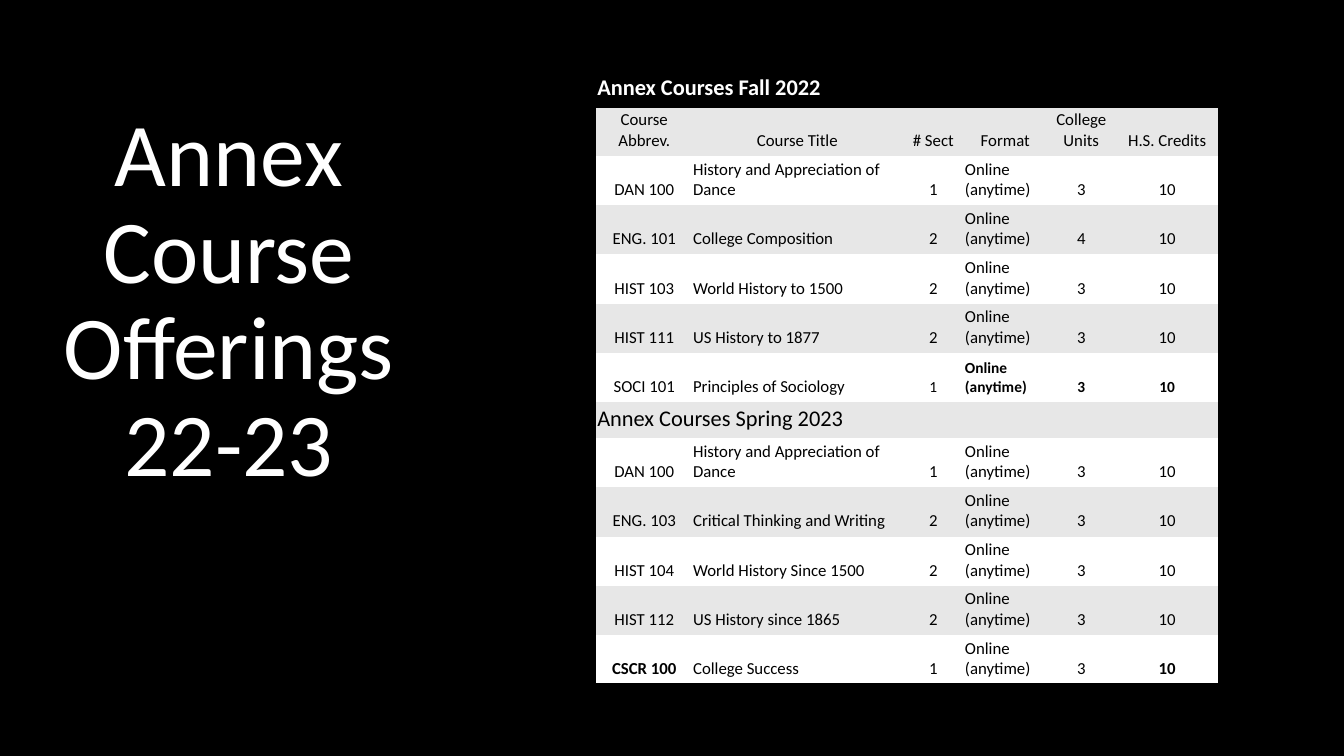
from pptx import Presentation
from pptx.dml.color import RGBColor
from pptx.enum.text import MSO_ANCHOR as Anchor, MSO_AUTO_SIZE as Fit, PP_ALIGN as Align
from pptx.util import Pt
from lxml.etree import SubElement as Sub
from pptx.oxml.ns import qn

BLACK = RGBColor(0, 0, 0)
WHITE = RGBColor(0xFF, 0xFF, 0xFF)
GRAY = RGBColor(0xE7, 0xE7, 0xE7)
FONT = "Calibri"
PLAIN = "{2D5ABB26-0587-4C30-8999-92F81FD0307C}"  # no style, no grid

# Content
TITLE = "Annex Course Offerings 22-23"
WEB = "Online (anytime)"
ROWS = [
    ("Annex Courses Fall 2022",),
    ("Course Abbrev.", "Course Title", "# Sect", "Format", "College Units", "H.S. Credits"),
    ("DAN 100", "History and Appreciation of Dance", "1", WEB, "3", "10"),
    ("ENG. 101", "College Composition", "2", WEB, "4", "10"),
    ("HIST 103", "World History to 1500", "2", WEB, "3", "10"),
    ("HIST 111", "US History to 1877", "2", WEB, "3", "10"),
    ("SOCI 101", "Principles of Sociology", "1", WEB, "3", "10"),
    ("Annex Courses Spring 2023",),
    ("DAN 100", "History and Appreciation of Dance", "1", WEB, "3", "10"),
    ("ENG. 103", "Critical Thinking and Writing", "2", WEB, "3", "10"),
    ("HIST 104", "World History Since 1500", "2", WEB, "3", "10"),
    ("HIST 112", "US History since 1865", "2", WEB, "3", "10"),
    ("CSCR 100", "College Success", "1", WEB, "3", "10"),
]
WIDTHS = [68.4, 150.4, 43.8, 59, 49.6, 73.2]
HEAD, BODY = 25.6, 35.2  # row heights
SOCI, LAST = 6, len(ROWS) - 1
BOLD = {(0, 0), (SOCI, 3), (SOCI, 4), (SOCI, 5), (LAST, 0), (LAST, 5)}
SMALL = {(SOCI, col) for col in range(2, 6)}
LEFT = (1, 3)  # left-aligned columns


def edge(cell, side):
    """Draw a black border; side is lnT or lnB."""
    props = cell._tc.get_or_add_tcPr()
    line = Sub(props, qn("a:" + side), w=str(Pt(2)))
    fill = Sub(line, qn("a:solidFill"))
    Sub(fill, qn("a:srgbClr"), val=str(BLACK))


prs = Presentation()
prs.slide_width, prs.slide_height = Pt(960), Pt(540)
slide = prs.slides.add_slide(prs.slide_layouts[5])
slide.background.fill.solid()
slide.background.fill.fore_color.rgb = BLACK

# Title
title = slide.shapes.title
title.left, title.top, title.width, title.height = Pt(36), Pt(57), Pt(255), Pt(301)
frame = title.text_frame
frame.text = TITLE
frame.word_wrap = True
frame.auto_size = Fit.NONE
frame.vertical_anchor = Anchor.BOTTOM
para = frame.paragraphs[0]
para.alignment = Align.CENTER
para.line_spacing = 0.9
para.space_after = Pt(6)
para.font.size, para.font.name = Pt(64), FONT
para.font.color.rgb = WHITE

# Course table
highs = [HEAD if len(row) == 1 else BODY for row in ROWS]
shape = slide.shapes.add_table(len(ROWS), len(WIDTHS), Pt(426), Pt(50.6),
                               Pt(sum(WIDTHS)), Pt(sum(highs)))
table = shape.table
table._tbl.tblPr.find(qn("a:tableStyleId")).text = PLAIN
for col, width in zip(table.columns, WIDTHS):
    col.width = Pt(width)
for row, high in zip(table.rows, highs):
    row.height = Pt(high)

for r, row in enumerate(ROWS):
    band = len(row) == 1
    for c in range(len(WIDTHS)):
        cell = table.cell(r, c)
        cell.margin_left = cell.margin_right = cell.margin_top = Pt(0.7)
        cell.margin_bottom = Pt(3.6)
        cell.vertical_anchor = Anchor.BOTTOM
        if r == 0:
            edge(cell, "lnT")
        if r in (0, LAST):
            edge(cell, "lnB")
        cell.fill.solid()
        cell.fill.fore_color.rgb = BLACK if r == 0 else GRAY if r % 2 else WHITE
        if c < len(row):
            cell.text = row[c]
        para = cell.text_frame.paragraphs[0]
        left = band or (c in LEFT and r != 1)
        para.alignment = Align.LEFT if left else Align.CENTER
        font = para.font
        font.name = FONT
        font.size = Pt(16 if band else 11 if (r, c) in SMALL else 12)
        font.bold = (r, c) in BOLD
        font.color.rgb = WHITE if r == 0 else BLACK
    if band:
        table.cell(r, 0).merge(table.cell(r, 1))

prs.save("out.pptx")
